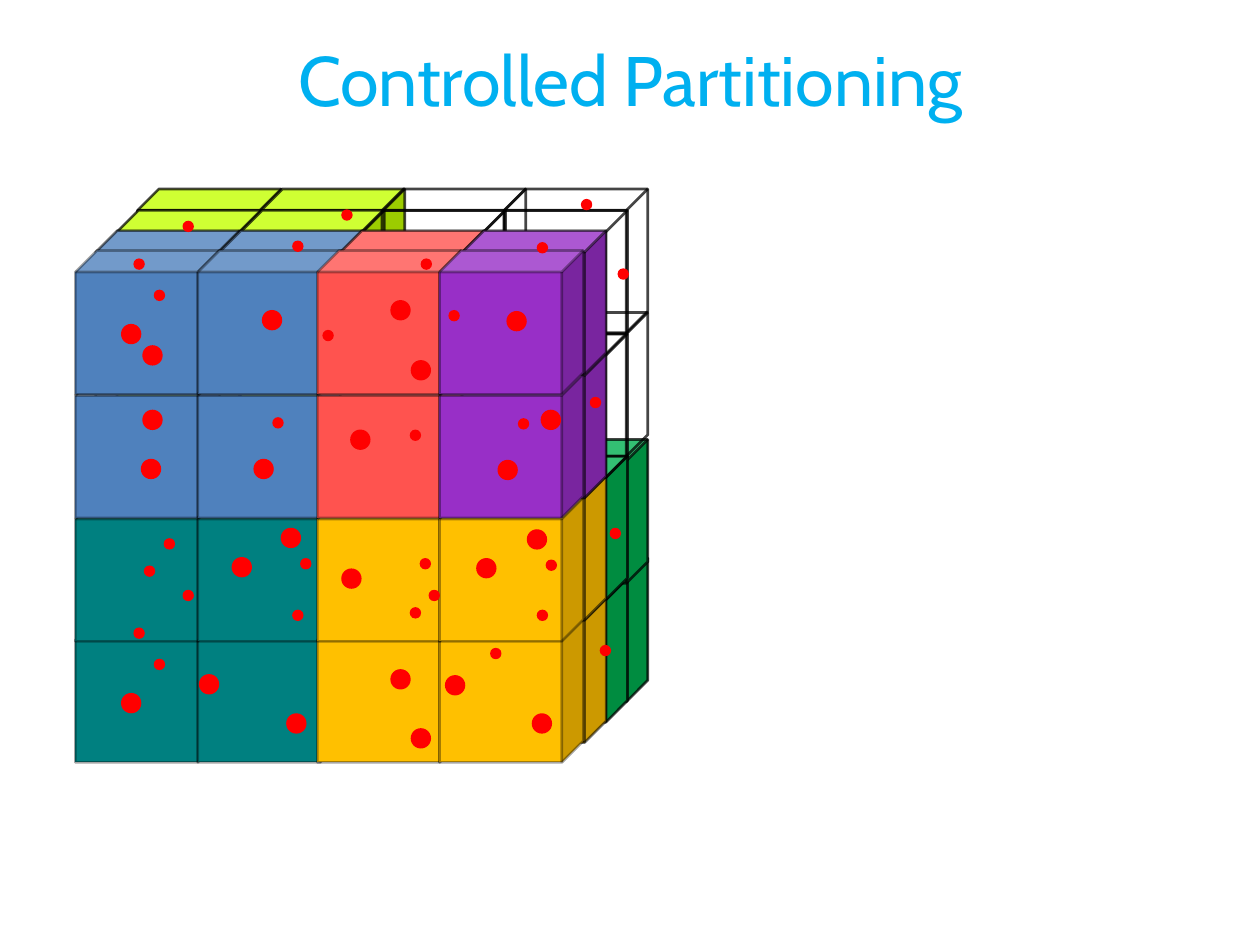
from lxml import etree
from pptx import Presentation
from pptx.dml.color import RGBColor
from pptx.enum.shapes import MSO_SHAPE
from pptx.enum.text import MSO_ANCHOR, PP_ALIGN
from pptx.oxml.ns import qn
from pptx.util import Cm, Pt

CUBE, OVAL = MSO_SHAPE.CUBE, MSO_SHAPE.OVAL
MIDDLE, CENTER = MSO_ANCHOR.MIDDLE, PP_ALIGN.CENTER

SIDE = 2.9
LEFTS = [
    [1.52, 3.99, 6.4, 8.86],
    [1.93, 4.42, 6.86, 9.32],
    [2.36, 4.85, 7.29, 9.75],
    [2.77, 5.26, 7.7, 10.16],
]
TOPS = [
    [5.05, 7.54, 10.03, 12.47],
    [4.65, 7.14, 9.6, 12.07],
    [4.24, 6.73, 9.19, 11.66],
    [3.81, 6.3, 8.86, 11.25],
]
EDGES = [34, 54, 73, 73]

BLOCKS = [
    ((0, 1), (3, 2), (3, 2), ("4F81BD", "4F81BD"), 70),
    ((0, 1), (3, 2), (1, 0), ("008080", "008080"), 100),
    ((0, 1), (1, 0), (3, 2), ("C3FF01", "C3FF01"), 100),
    ((0, 1), (1, 0), (1, 0), ("4F81BD", "4F81BD"), 100),
    ((2, 3), (3, 2), (3, 2), ("00B050", "00B050"), 100),
    ((2, 3), (3, 2), (1, 0), ("FFC000", "FFC000"), 100),
    ((2, 3), (1, 0), (3, 2), (None, None), 100),
    ((2, 3), (1, 0), (1, 0), ("FF534F", "982FC7"), 100),
]

BIG = [
    (2.44, 13.97), (4.01, 13.59), (2.44, 6.53), (2.87, 6.96), (2.84, 9.25),
    (2.87, 8.26), (4.67, 11.23), (5.77, 14.38), (7.87, 13.49), (8.28, 14.68),
    (6.88, 11.46), (5.66, 10.64), (5.11, 9.25), (7.06, 8.66), (5.28, 6.25),
    (7.87, 6.05), (8.28, 7.26), (8.97, 13.61), (10.72, 14.38), (9.6, 11.25),
    (10.62, 10.67), (10.03, 9.27), (10.9, 8.26), (10.21, 6.27),
]
SMALL = [
    (3.68, 11.89), (3.1, 13.28), (2.69, 12.65), (2.9, 11.4), (3.3, 10.85),
    (3.68, 4.45), (3.1, 5.84), (2.69, 5.21), (5.89, 12.29), (9.88, 13.06),
    (8.26, 12.24), (6.05, 11.25), (8.46, 11.25), (8.26, 8.66), (5.49, 8.41),
    (5.89, 4.85), (9.04, 6.25), (8.48, 5.21), (10.82, 12.29), (8.64, 11.89),
    (12.09, 13), (11, 11.28), (12.29, 10.64), (11.89, 8), (10.44, 8.43),
    (10.82, 4.88), (6.88, 4.22), (12.45, 5.41), (6.5, 6.65), (11.71, 4.01),
]


def paint(fill, code, alpha=100):
    """Give a fill a solid hex colour with an opacity in percent."""
    fill.solid()
    fill.fore_color.rgb = RGBColor.from_string(code)
    if alpha < 100:
        tone = fill._xPr.find(qn("a:solidFill"))[0]
        etree.SubElement(tone, qn("a:alpha"), val=str(alpha * 1000))


def add_title(slide, text):
    """Place and format the slide title."""
    title = slide.shapes.title
    title.left, title.top, title.width, title.height = Cm(0), Cm(0), Cm(25.4), Cm(3.18)
    frame = title.text_frame
    frame.vertical_anchor = MIDDLE
    line = frame.paragraphs[0]
    line.alignment = CENTER
    run = line.add_run()
    run.text = text
    run.font.size = Pt(40)
    run.font.name = "Cabin"
    paint(run.font.fill, "00B0F0")


def add_cube(group, col, row, depth, code, alpha):
    """Draw the cube of one grid cell."""
    cube = group.shapes.add_shape(
        CUBE, Cm(LEFTS[depth][col]), Cm(TOPS[depth][row]), Cm(SIDE), Cm(SIDE))
    cube.adjustments[0] = 0.15
    cube.shadow.inherit = False
    if code:
        paint(cube.fill, code, alpha)
    else:
        cube.fill.background()
    cube.line.width = Pt(1.5)
    paint(cube.line.fill, "000000", EDGES[depth])


def add_block(slide, cols, rows, depths, codes, alpha):
    """Draw a block of cubes from bottom to top and back to front."""
    group = slide.shapes.add_group_shape()
    for row in rows:
        for depth in depths:
            for col, code in zip(cols, codes):
                faint = code == "4F81BD" and (row, depth) == (1, 1)
                add_cube(group, col, row, depth, code, 50 if faint else alpha)


def add_dots(slide, spots, size):
    """Draw red data points of one size."""
    for left, top in spots:
        dot = slide.shapes.add_shape(OVAL, Cm(left), Cm(top), Cm(size), Cm(size))
        dot.shadow.inherit = False
        paint(dot.fill, "FF0000")
        dot.line.fill.background()


def main():
    """Build and save the slide."""
    deck = Presentation()
    deck.slide_width, deck.slide_height = Cm(25.4), Cm(19.05)
    slide = deck.slides.add_slide(deck.slide_layouts[5])
    add_title(slide, "Controlled Partitioning")
    for block in BLOCKS:
        add_block(slide, *block)
    add_dots(slide, BIG, 0.41)
    add_dots(slide, SMALL, 0.23)
    deck.save("out.pptx")


if __name__ == "__main__":
    main()
